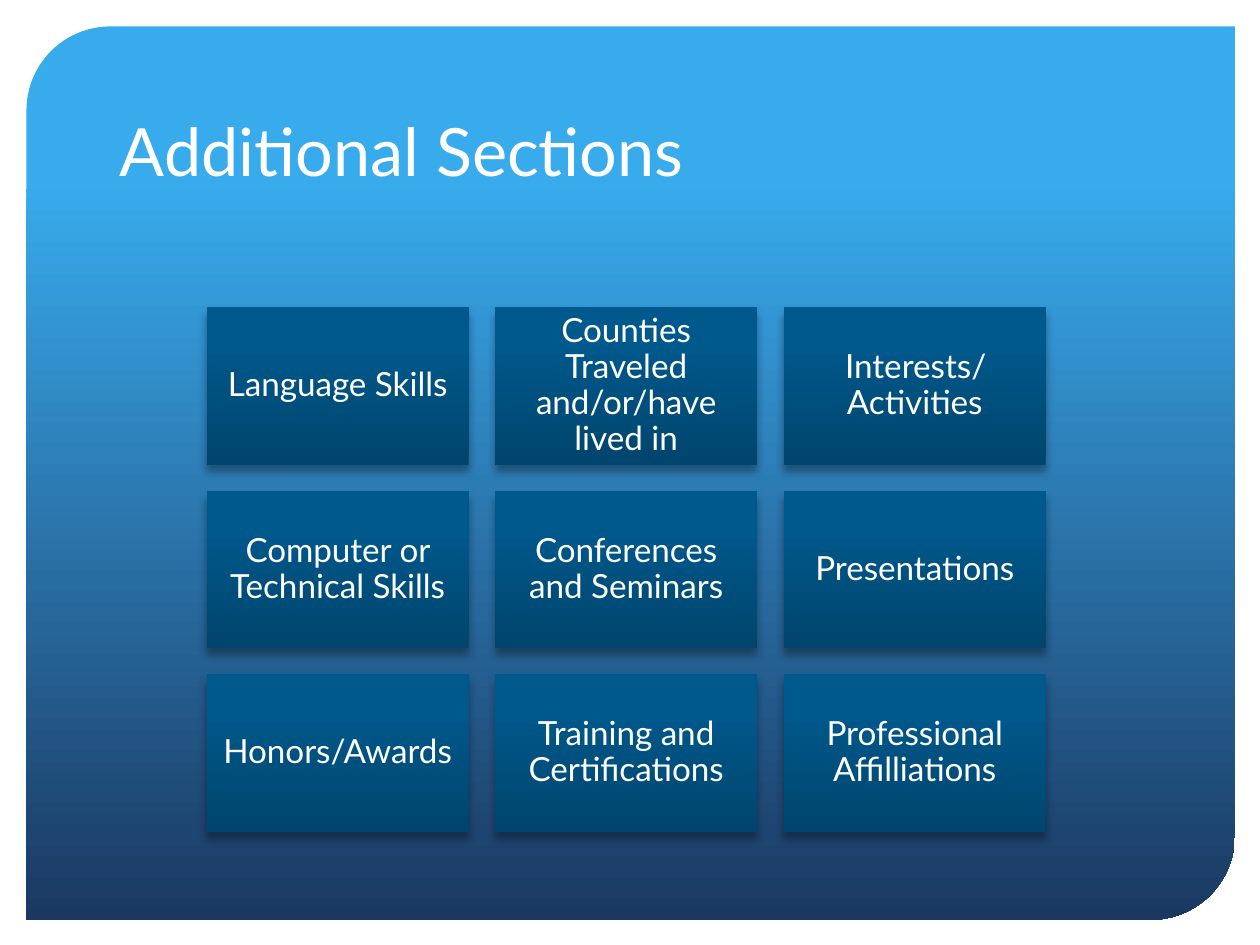
from lxml import etree
from pptx import Presentation
from pptx.dml.color import RGBColor
from pptx.enum.shapes import MSO_SHAPE
from pptx.enum.text import MSO_ANCHOR, MSO_AUTO_SIZE, PP_ALIGN
from pptx.oxml import parse_xml
from pptx.oxml.ns import nsdecls
from pptx.util import Inches, Pt

WHITE = RGBColor(0xFF, 0xFF, 0xFF)
SKY = RGBColor(0x38, 0xAB, 0xED)
NAVY = RGBColor(0x1B, 0x38, 0x61)
TILE_DARK = RGBColor(0x00, 0x45, 0x6D)
TILE_BLUE = RGBColor(0x00, 0x59, 0x8D)
FONT = "Lato"

SECTIONS = [
    ["Language Skills", "Counties Traveled and/or/have lived in", "Interests/Activities"],
    ["Computer or Technical Skills", "Conferences and Seminars", "Presentations"],
    ["Honors/Awards", "Training and Certifications", "Professional Affilliations"],
]


def write_text(shape, text, *, size, align, anchor, inset=None, spacing=None):
    """Put one formatted white paragraph in a shape."""
    frame = shape.text_frame
    frame.word_wrap = True
    frame.auto_size = MSO_AUTO_SIZE.NONE
    frame.vertical_anchor = anchor
    if inset is not None:
        frame.margin_left = frame.margin_right = inset
        frame.margin_top = frame.margin_bottom = inset
    paragraph = frame.paragraphs[0]
    paragraph.alignment = align
    paragraph.line_spacing = spacing
    run = paragraph.add_run()
    run.text = text
    run.font.name = FONT
    run.font.size = Pt(size)
    run.font.color.rgb = WHITE


def add_gradient_shape(slide, kind, box, stops, angle):
    """Add an unlined shape with a two-stop linear gradient."""
    shape = slide.shapes.add_shape(kind, *box)
    shape.shadow.inherit = False
    shape.line.fill.background()
    shape.fill.gradient()
    shape.fill.gradient_angle = angle
    for stop, (position, color) in zip(shape.fill.gradient_stops, stops):
        stop.position = position
        stop.color.rgb = color
    return shape


def add_drop_shadow(shape):
    """Give a shape a soft shadow straight below it."""
    effects = shape._element.spPr.find("{*}effectLst")
    shadow = parse_xml(
        f'<a:outerShdw {nsdecls("a")} blurRad="{Pt(5)}" dist="{Pt(4)}" '
        'dir="5400000" rotWithShape="0"/>'
    )
    color = etree.SubElement(shadow, shadow.tag.replace("outerShdw", "srgbClr"), val="000000")
    etree.SubElement(color, shadow.tag.replace("outerShdw", "alpha"), val="35000")
    effects.append(shadow)


def add_backdrop(slide, box):
    """Place the rounded gradient panel behind everything else."""
    panel = add_gradient_shape(
        slide, MSO_SHAPE.ROUND_2_DIAG_RECTANGLE, box, [(0.17, SKY), (1, NAVY)], 270
    )
    panel.adjustments[0] = 0.094
    panel.adjustments[1] = 0
    slide.shapes._spTree.insert(2, panel._element)


def place_title(slide, box, text):
    """Move and format the title placeholder."""
    title = slide.shapes.title
    title.left, title.top, title.width, title.height = box
    write_text(title, text, size=38, align=PP_ALIGN.LEFT, anchor=MSO_ANCHOR.BOTTOM)


def add_section_grid(slide, box, rows, gap):
    """Fill a box with an evenly spaced grid of section tiles."""
    left, top, width, height = box
    columns = len(rows[0])
    tile_width = (width - gap * (columns - 1)) // columns
    tile_height = (height - gap * (len(rows) - 1)) // len(rows)
    for row, sections in enumerate(rows):
        for column, section in enumerate(sections):
            tile_box = (
                left + column * (tile_width + gap),
                top + row * (tile_height + gap),
                tile_width,
                tile_height,
            )
            tile = add_gradient_shape(
                slide, MSO_SHAPE.RECTANGLE, tile_box, [(0, TILE_DARK), (0.8, TILE_BLUE)], 90
            )
            add_drop_shadow(tile)
            write_text(
                tile, section, size=19, align=PP_ALIGN.CENTER,
                anchor=MSO_ANCHOR.MIDDLE, inset=Inches(0.08), spacing=0.9,
            )


def main():
    """Build and save the slide."""
    deck = Presentation()
    deck.slide_width, deck.slide_height = Inches(10), Inches(7.5)
    slide = deck.slides.add_slide(deck.slide_layouts[5])
    add_backdrop(slide, (Inches(0.21), Inches(0.21), Inches(9.59), Inches(7.09)))
    place_title(
        slide, (Inches(0.85), Inches(0.42), Inches(8.29), Inches(1.14)), "Additional Sections"
    )
    add_section_grid(
        slide, (Inches(1.64), Inches(2.44), Inches(6.66), Inches(4.16)), SECTIONS, Inches(0.21)
    )
    deck.save("out.pptx")


if __name__ == "__main__":
    main()
